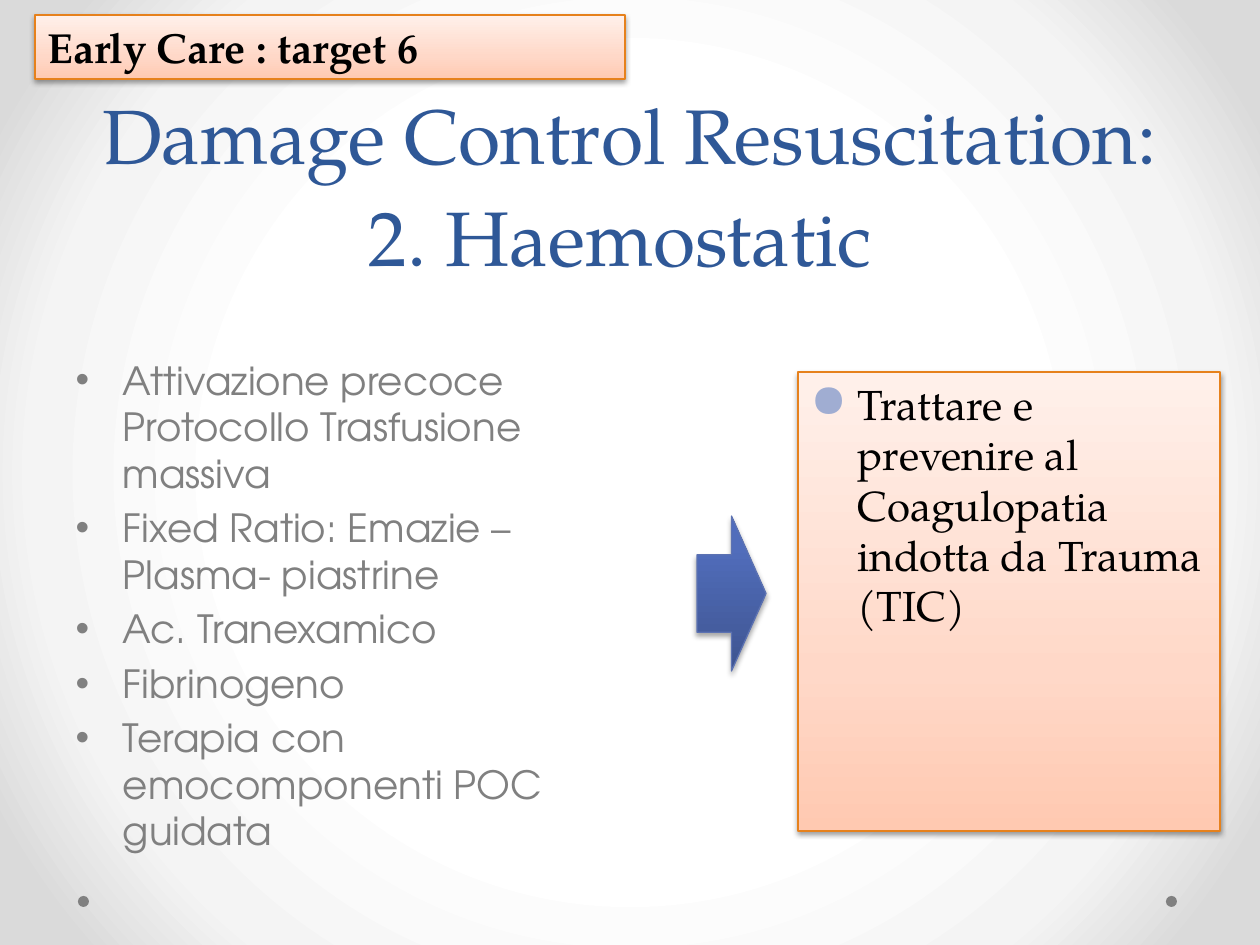
from dataclasses import dataclass

from lxml.etree import SubElement as Sub
from pptx import Presentation as Deck
from pptx.dml.color import RGBColor as Rgb
from pptx.enum.shapes import MSO_SHAPE as Kind
from pptx.enum.text import MSO_ANCHOR as Anchor
from pptx.enum.text import MSO_AUTO_SIZE as Fit
from pptx.enum.text import PP_ALIGN as Align
from pptx.oxml.ns import qn
from pptx.util import Emu, Pt

PX = 914400 / 126
SERIF = "TeX Gyre Pagella"
SANS = "TeX Gyre Adventor"
HEX = {
    "title": "2F5897", "gray": "808080", "black": "000000",
    "white": "FFFFFF", "pale": "F4F4F4", "edge": "DADADA",
    "peach": "FFC9B1", "rose": "FFD8C8", "cream": "FFF0EA", "orange": "E6811C",
    "navy": "3E5490", "blue": "516DBB", "sky": "4F6CBE", "rim": "5C72B2",
    "dot": "A0ADD2",
}


@dataclass(frozen=True)
class Box:
    left: int
    top: int
    width: int
    height: int

    def emu(self) -> list[Emu]:
        return [Emu(round(n * PX)) for n in (self.left, self.top, self.width, self.height)]


@dataclass(frozen=True)
class Skin:
    stops: tuple
    line: str
    alpha: int
    drop: float


@dataclass(frozen=True)
class Type:
    font: str
    size: float
    color: str
    bold: bool = False


@dataclass(frozen=True)
class Mark:
    char: str
    color: str
    size: int


WARM = Skin(((0, "peach"), (35, "rose"), (100, "cream")), "orange", 38, 1.6)
COOL = Skin(((0, "navy"), (80, "blue"), (100, "sky")), "rim", 35, 1.8)
GLOW = ((50, "white"), (76, "pale"), (92, "edge"))


def blend(fill, host, stops: tuple, round_: bool = False) -> None:
    fill.solid()
    old = host.find(qn("a:solidFill"))
    grad = Sub(host, qn("a:gradFill"), rotWithShape="1")
    host.replace(old, grad)
    row = Sub(grad, qn("a:gsLst"))
    for pos, name in stops:
        stop = Sub(row, qn("a:gs"), pos=str(pos * 1000))
        Sub(stop, qn("a:srgbClr"), val=HEX[name])
    if round_:
        way = Sub(grad, qn("a:path"), path="circle")
        Sub(way, qn("a:fillToRect"), l="50000", t="50000", r="50000", b="50000")
    else:
        Sub(grad, qn("a:lin"), ang="16200000", scaled="0")


def draw(slide, kind: Kind, box: Box, skin: Skin):
    shape = slide.shapes.add_shape(kind, *box.emu())
    props = shape._element.spPr
    blend(shape.fill, props, skin.stops)
    shape.line.color.rgb = Rgb.from_string(HEX[skin.line])
    shape.line.width = Pt(0.75)
    shape.shadow.inherit = False
    shade = Sub(props.find(qn("a:effectLst")), qn("a:outerShdw"),
                blurRad=str(Pt(3.1)), dist=str(Pt(skin.drop)),
                dir="5400000", rotWithShape="0")
    color = Sub(shade, qn("a:srgbClr"), val=HEX["black"])
    Sub(color, qn("a:alpha"), val=str(skin.alpha * 1000))
    return shape


def dot(slide, box: Box) -> None:
    shape = slide.shapes.add_shape(Kind.OVAL, *box.emu())
    shape.fill.solid()
    shape.fill.fore_color.rgb = Rgb.from_string(HEX["gray"])
    shape.line.fill.background()
    shape.shadow.inherit = False


def place(shape, box: Box) -> None:
    shape.left, shape.top, shape.width, shape.height = box.emu()


def write(shape, lines: list[str], face: Type, anchor: Anchor,
          align: Align = Align.LEFT, mark: Mark | None = None, fit: Fit = Fit.NONE) -> None:
    frame = shape.text_frame
    frame.text = "\n".join(lines)
    frame.word_wrap = True
    frame.auto_size = fit
    frame.vertical_anchor = anchor
    for i, para in enumerate(frame.paragraphs):
        if mark:
            props = para._p.get_or_add_pPr()
            props.set("marL", str(Pt(27)))
            props.set("indent", str(-Pt(27)))
            tint = Sub(props, qn("a:buClr"))
            Sub(tint, qn("a:srgbClr"), val=HEX[mark.color])
            Sub(props, qn("a:buSzPct"), val=str(mark.size * 1000))
            Sub(props, qn("a:buChar"), char=mark.char)
        para.alignment = align
        if i == 0:
            para.space_before = Pt(0)
        for run in para.runs:
            run.font.name = face.font
            run.font.size = Pt(face.size)
            run.font.bold = face.bold
            run.font.color.rgb = Rgb.from_string(HEX[face.color])


def main() -> None:
    deck = Deck()
    deck.slide_width, deck.slide_height = Box(0, 0, 1260, 945).emu()[2:]
    slide = deck.slides.add_slide(deck.slide_layouts[1])
    back = slide.background.fill
    back.solid()
    blend(back, slide._element.find(".//" + qn("p:bgPr")), GLOW, True)

    for left in (1166, 78):
        dot(slide, Box(left, 896, 11, 11))

    title = slide.shapes.title
    place(title, Box(63, 123, 1134, 165))
    write(title, ["Damage Control Resuscitation: 2. Haemostatic "],
          Type(SERIF, 44, "title"), Anchor.BOTTOM, Align.CENTER)
    title.text_frame.paragraphs[0].line_spacing = Pt(58)

    tag = draw(slide, Kind.RECTANGLE, Box(35, 15, 590, 64), WARM)
    write(tag, ["Early Care : target 6"], Type(SERIF, 24, "black", True),
          Anchor.TOP, fit=Fit.SHAPE_TO_FIT_TEXT)

    body = slide.placeholders[1]
    place(body, Box(63, 350, 557, 459))
    write(body, [
        "Attivazione precoce Protocollo Trasfusione massiva",
        "Fixed Ratio: Emazie – Plasma- piastrine",
        "Ac. Tranexamico",
        "Fibrinogeno",
        "Terapia con emocomponenti POC guidata",
    ], Type(SANS, 22.2, "gray"), Anchor.TOP, mark=Mark("•", "gray", 100))

    goal = draw(slide, Kind.RECTANGLE, Box(798, 372, 422, 459), WARM)
    write(goal, ["Trattare e prevenire al Coagulopatia indotta da Trauma (TIC)"],
          Type(SERIF, 24, "black"), Anchor.TOP, mark=Mark("●", "dot", 110))

    draw(slide, Kind.RIGHT_ARROW, Box(697, 516, 69, 155), COOL)
    deck.save("out.pptx")


if __name__ == "__main__":
    main()
